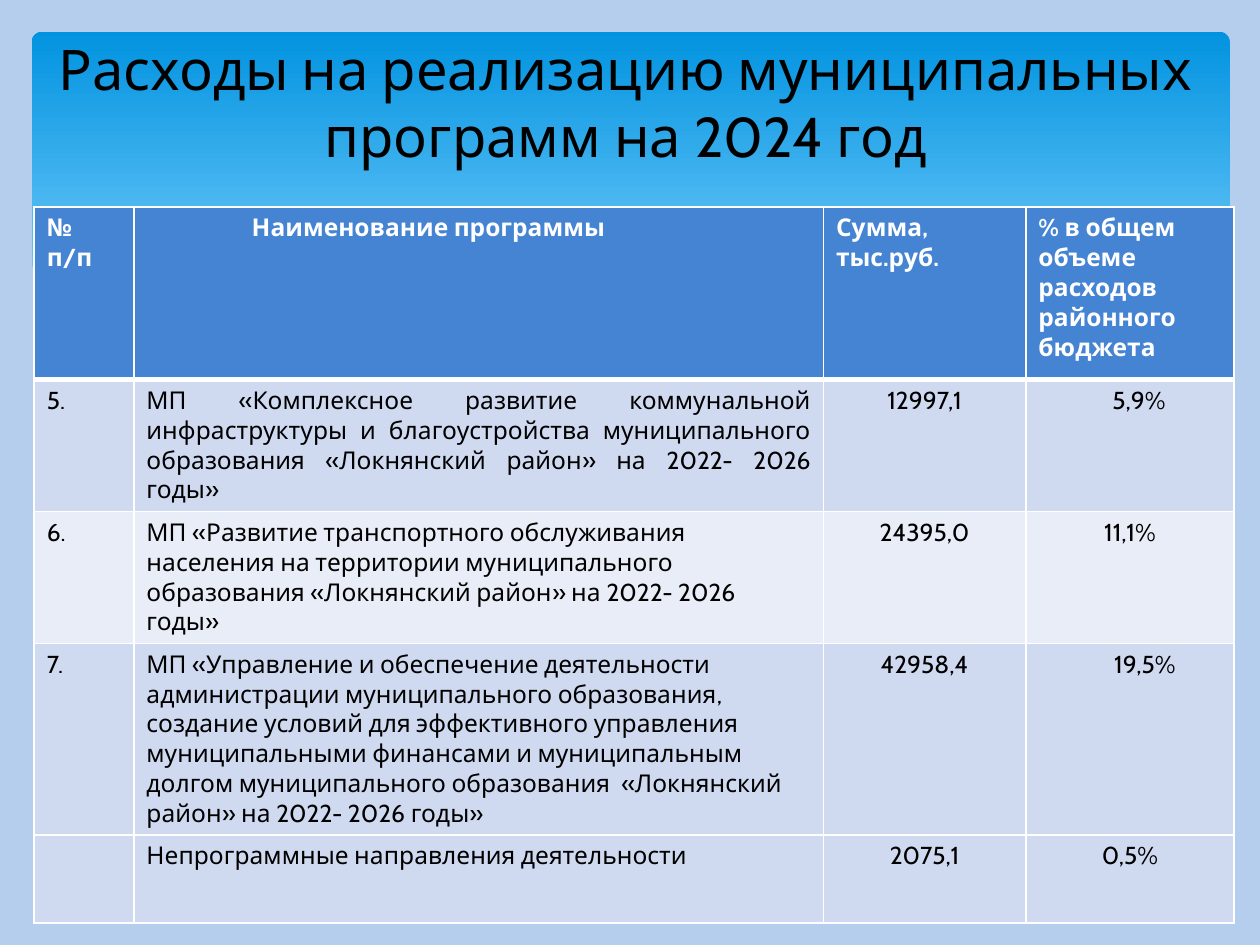
from lxml import etree
from pptx import Presentation
from pptx.dml.color import RGBColor
from pptx.enum import shapes, text
from pptx.oxml import ns
from pptx.util import Cm, Pt

TITLE = "Расходы на реализацию муниципальных программ на 2024 год"
HEADER = ("№ п/п", "Наименование программы", "Сумма, тыс.руб.",
          "% в общем объеме расходов районного бюджета")
PROGRAMMES = [
    ("5.", "МП «Комплексное развитие коммунальной инфраструктуры и благоустройства "
           "муниципального образования «Локнянский район» на 2022- 2026 годы»",
     "12997,1", "5,9%"),
    ("6.", "МП «Развитие транспортного обслуживания населения на территории "
           "муниципального образования «Локнянский район» на 2022- 2026 годы»",
     "24395,0", "11,1%"),
    ("7.", "МП «Управление и обеспечение деятельности администрации муниципального "
           "образования, создание условий для эффективного управления муниципальными "
           "финансами и муниципальным долгом муниципального образования  «Локнянский "
           "район» на 2022- 2026 годы»",
     "42958,4", "19,5%"),
    ("", "Непрограммные направления деятельности", "2075,1", "0,5%"),
]
COLUMN_WIDTHS = (2.01, 13.9, 4.08, 4.2)
ROW_HEIGHTS = (3.48, 2.18, 2.18, 3.48, 1.78)
LEFT, CENTER, JUSTIFY = (text.PP_ALIGN.LEFT, text.PP_ALIGN.CENTER, text.PP_ALIGN.JUSTIFY)
COLUMN_ALIGN = (LEFT, LEFT, CENTER, CENTER)
CELL_ALIGN = {(1, 1): JUSTIFY, (0, 2): LEFT, (0, 3): LEFT}
CELL_INDENT = {(0, 1): 2.12, (1, 3): 0.36, (3, 3): 0.6}  # (row, column): cm

WAVE = [(0.58, 5.41), (1.2, 5.15), (2.4, 4.88), (4.2, 4.67), (6.4, 4.75),
        (9.3, 5.13), (12.8, 5.92), (16.4, 6.62), (19.6, 7), (21.9, 6.96),
        (23.6, 6.65), (24.82, 6.25), (24.82, 8.36), (0.58, 8.36)]

COLORS = {"background": "B5CEED", "card top": "0293E0", "card bottom": "83D3FE",
          "header": "4584D3", "band": "CFD9EF", "light band": "E9EDF7",
          "text": "000000", "white": "FFFFFF"}
ROW_FILLS = ("header", "band", "light band", "band", "band")


def rgb(name):
    return RGBColor.from_string(COLORS[name])


def paint(fill, name):
    fill.solid()
    fill.fore_color.rgb = rgb(name)


def write(frame, words, size, color, align, bold=False):
    frame.text = words
    paragraph = frame.paragraphs[0]
    paragraph.alignment = align
    font = paragraph.font if not paragraph.runs else paragraph.runs[0].font
    for attribute, value in {"name": "Cabin", "size": Pt(size), "bold": bold}.items():
        setattr(font, attribute, value)
    font.color.rgb = rgb(color)
    return paragraph


def add_borders(cell, widths):
    """Draw white cell borders; widths maps L, R, T, B to points."""
    properties = cell._tc.get_or_add_tcPr()
    for side, width in widths.items():
        line = etree.SubElement(properties, ns.qn(f"a:ln{side}"), w=str(Pt(width)))
        fill = etree.SubElement(line, ns.qn("a:solidFill"))
        etree.SubElement(fill, ns.qn("a:srgbClr"), val=COLORS["white"])


def add_backdrop(slide):
    paint(slide.background.fill, "background")
    card = slide.shapes.add_shape(shapes.MSO_SHAPE.ROUNDED_RECTANGLE,
                                  Cm(0.64), Cm(0.64), Cm(24.15), Cm(6.86))
    card.adjustments[0] = 0.03
    card.fill.gradient()
    card.fill.gradient_angle = 270
    stops = zip(card.fill.gradient_stops, (0, 0.9), ("card top", "card bottom"))
    for stop, position, name in stops:
        stop.position = position
        stop.color.rgb = rgb(name)

    points = [(Cm(x), Cm(y)) for x, y in WAVE]
    builder = slide.shapes.build_freeform(*points[0])
    builder.add_line_segments(points[1:], close=True)
    wave = builder.convert_to_shape()
    paint(wave.fill, "background")
    for part in (card, wave):
        part.line.fill.background()
        part.shadow.inherit = False


def add_title(slide):
    title = slide.shapes.title
    title.element.getparent().append(title.element)  # in front of the backdrop
    box = {"left": 0.51, "top": 0.33, "width": 24.21, "height": 3.45}
    for attribute, value in box.items():
        setattr(title, attribute, Cm(value))
    title.text_frame.vertical_anchor = text.MSO_ANCHOR.MIDDLE
    write(title.text_frame, TITLE, 32, "text", CENTER)


def add_programmes(slide):
    rows = [HEADER, *PROGRAMMES]
    table = slide.shapes.add_table(len(rows), len(HEADER), Cm(0.69), Cm(4.17),
                                   Cm(sum(COLUMN_WIDTHS)), Cm(sum(ROW_HEIGHTS))).table
    for column, width in zip(table.columns, COLUMN_WIDTHS):
        column.width = Cm(width)
    for r, (row, height) in enumerate(zip(rows, ROW_HEIGHTS)):
        table.rows[r].height = Cm(height)
        for c, words in enumerate(row):
            cell = table.cell(r, c)
            paragraph = write(cell.text_frame, words, 14, "text" if r else "white",
                              CELL_ALIGN.get((r, c), COLUMN_ALIGN[c]), bold=r == 0)
            if (r, c) in CELL_INDENT:
                indent = Cm(CELL_INDENT[r, c])
                paragraph._p.get_or_add_pPr().set("marL", str(indent))
            add_borders(cell, {"L": 1, "R": 1, "T": 3 if r == 1 else 1,
                               "B": 3 if r == 0 else 1})
            paint(cell.fill, ROW_FILLS[r])


def main():
    deck = Presentation()
    deck.slide_width, deck.slide_height = Cm(25.4), Cm(19.05)
    slide = deck.slides.add_slide(deck.slide_layouts[5])
    add_backdrop(slide)
    add_title(slide)
    add_programmes(slide)
    deck.save("out.pptx")


if __name__ == "__main__":
    main()
